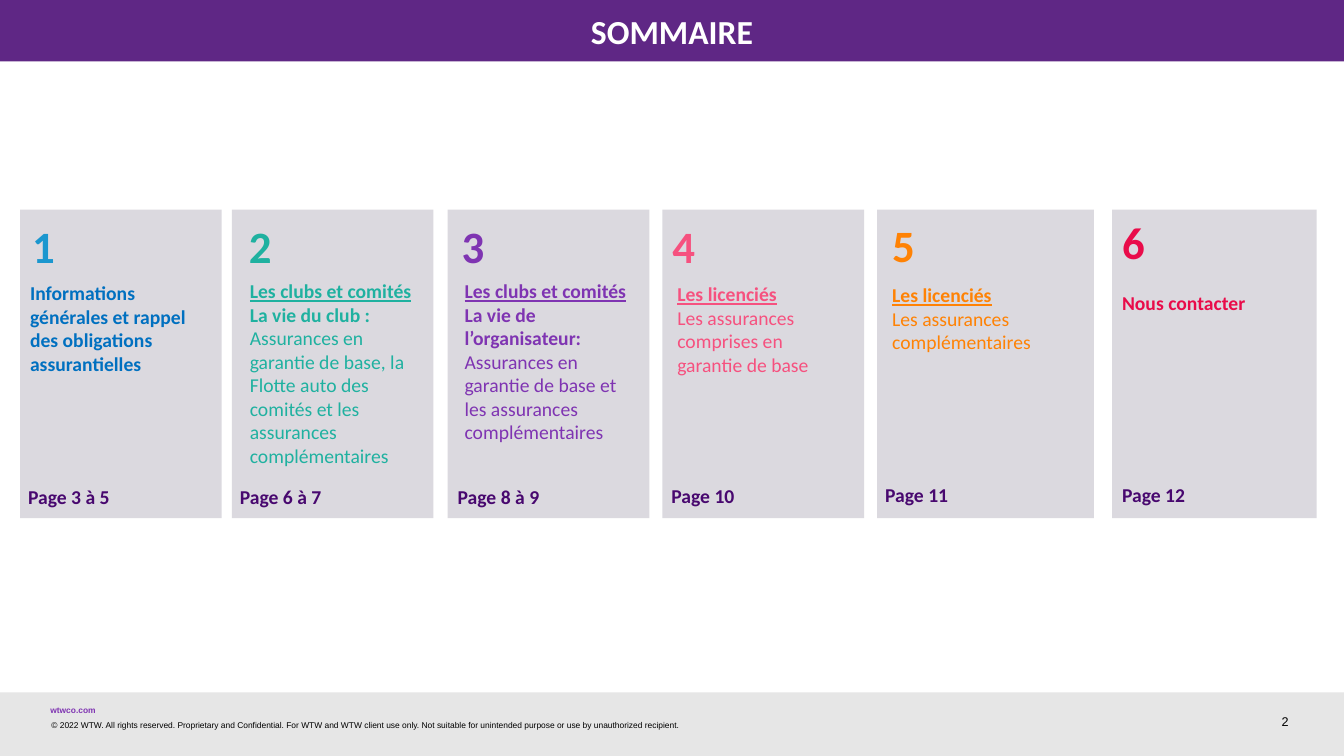
from dataclasses import dataclass

from pptx import Presentation
from pptx import util as u
from pptx.dml.color import RGBColor
from pptx.enum import shapes, text


@dataclass(frozen=True)
class Theme:
    font: str = "Calibri"
    footer_font: str = "Arial"
    title_size: int = 24
    number_size: int = 32
    body_size: int = 14
    page_number_size: int = 9
    footer_size: int = 6
    banner: str = "5F2785"
    white: str = "FFFFFF"
    black: str = "000000"
    footer: str = "E6E6E6"
    card: str = "DBD9DF"
    page: str = "48086F"
    sky: str = "1B97CF"
    blue: str = "0070C0"
    teal: str = "1FB1A0"
    violet: str = "7F34B2"
    pink: str = "F6517F"
    orange: str = "FF8204"
    red: str = "E90C4A"


@dataclass(frozen=True)
class Line:
    words: str
    bold: bool = False
    underline: bool = False


@dataclass(frozen=True)
class Card:
    left: float
    width: float
    number_at: tuple
    body_at: tuple
    body_size: tuple
    page_at: tuple
    number_color: str
    body_color: str
    lines: list
    pages: str


class SummarySlide:
    def __init__(self, deck, theme):
        self.theme = theme
        self.page = deck.slides.add_slide(deck.slide_layouts[5])

    def style(self, para, size, color, bold=False, underline=False, font=None):
        para.font.name = font or self.theme.font
        para.font.size = u.Pt(size)
        para.font.bold = bold
        para.font.underline = underline
        para.font.color.rgb = RGBColor.from_string(color)

    def title(self, words, height):
        box = self.page.shapes.title
        box.left, box.top = u.Inches(0), u.Inches(0)
        box.width, box.height = u.Inches(13.33), u.Inches(height)
        box.fill.solid()
        box.fill.fore_color.rgb = RGBColor.from_string(self.theme.banner)
        frame = box.text_frame
        frame.text = words
        frame.auto_size = text.MSO_AUTO_SIZE.NONE
        frame.vertical_anchor = text.MSO_ANCHOR.MIDDLE
        para = frame.paragraphs[0]
        para.alignment = text.PP_ALIGN.CENTER
        self.style(para, self.theme.title_size, self.theme.white, bold=True)

    def panel(self, left, top, width, height, color):
        box = self.page.shapes.add_shape(
            shapes.MSO_SHAPE.RECTANGLE, *map(u.Inches, (left, top, width, height)))
        box.shadow.inherit = False
        box.fill.solid()
        box.fill.fore_color.rgb = RGBColor.from_string(color)
        box.line.fill.background()

    def text_box(self, at, size, lines, points, color, font=None, inset=True):
        box = self.page.shapes.add_textbox(*map(u.Inches, (*at, *size)))
        frame = box.text_frame
        frame.word_wrap = True
        if not inset:
            frame.margin_left = frame.margin_right = 0
            frame.margin_top = frame.margin_bottom = 0
        for index, line in enumerate(lines):
            para = frame.add_paragraph() if index else frame.paragraphs[0]
            para.text = line.words
            self.style(para, points, color, line.bold, line.underline, font)
        return frame

    def footer_text(self, at, size, line, points, color):
        return self.text_box(at, size, [line], points, color,
                             self.theme.footer_font, inset=False)

    def card(self, number, card):
        theme = self.theme
        self.panel(card.left, 2.08, card.width, 3.06, theme.card)
        self.text_box(card.number_at, (0.82, 0.64), [Line(str(number), True)],
                      theme.number_size, card.number_color)
        self.text_box(card.body_at, card.body_size, card.lines,
                      theme.body_size, card.body_color)
        self.text_box(card.page_at, (1.92, 0.34), [Line(card.pages, True)],
                      theme.body_size, theme.page)


def summary_cards(theme):
    clubs = Line("Les clubs et comités", True, True)
    members = Line("Les licenciés", True, True)
    return [
        Card(0.2, 2, (0.22, 2.12), (0.2, 2.74), (1.93, 1.04), (0.18, 4.76),
             theme.sky, theme.blue,
             [Line("Informations générales et rappel des obligations assurantielles", True)],
             "Page 3 à 5"),
        Card(2.3, 2, (2.37, 2.12), (2.38, 2.72), (1.87, 1.99), (2.28, 4.76),
             theme.teal, theme.teal,
             [clubs, Line("La vie du club :", True),
              Line("Assurances en garantie de base, la Flotte auto des comités "
                   "et les assurances complémentaires")],
             "Page 6 à 7"),
        Card(4.44, 2, (4.48, 2.12), (4.51, 2.72), (1.87, 1.75), (4.44, 4.76),
             theme.violet, theme.violet,
             [clubs, Line("La vie de l’organisateur:", True),
              Line("Assurances en garantie de base et les assurances complémentaires")],
             "Page 8 à 9"),
        Card(6.57, 2, (6.57, 2.12), (6.62, 2.75), (1.87, 1.04), (6.56, 4.75),
             theme.pink, theme.pink,
             [members, Line("Les assurances comprises en garantie de base")],
             "Page 10"),
        Card(8.7, 2.15, (8.75, 2.11), (8.75, 2.76), (2.15, 0.81), (8.68, 4.74),
             theme.orange, theme.orange,
             [members, Line("Les assurances complémentaires")],
             "Page 11"),
        Card(11.03, 2.03, (11.03, 2.08), (11.03, 2.84), (2.15, 0.34), (11.03, 4.74),
             theme.red, theme.red, [Line("Nous contacter", True)], "Page 12"),
    ]


def main():
    deck = Presentation()
    deck.slide_width, deck.slide_height = u.Inches(13.33), u.Inches(7.5)
    theme = Theme()
    slide = SummarySlide(deck, theme)

    # Title banner
    slide.title("SOMMAIRE", 0.61)

    # Footer band
    slide.panel(0, 6.87, 13.33, 0.63, theme.footer)
    slide.footer_text((0.5, 7), (0.6, 0.1), Line("wtwco.com", True),
                      theme.footer_size, theme.violet)
    slide.footer_text(
        (0.51, 7.14), (6.5, 0.1),
        Line("© 2022 WTW. All rights reserved. Proprietary and Confidential. "
             "For WTW and WTW client use only. Not suitable for unintended purpose "
             "or use by unauthorized recipient."),
        theme.footer_size, theme.black)
    page_number = slide.footer_text((12.44, 7), (0.34, 0.23), Line("2"),
                                    theme.page_number_size, theme.black)
    page_number.vertical_anchor = text.MSO_ANCHOR.BOTTOM
    page_number.paragraphs[0].alignment = text.PP_ALIGN.RIGHT

    # Summary cards
    for number, card in enumerate(summary_cards(theme), start=1):
        slide.card(number, card)

    deck.save("out.pptx")


if __name__ == "__main__":
    main()
